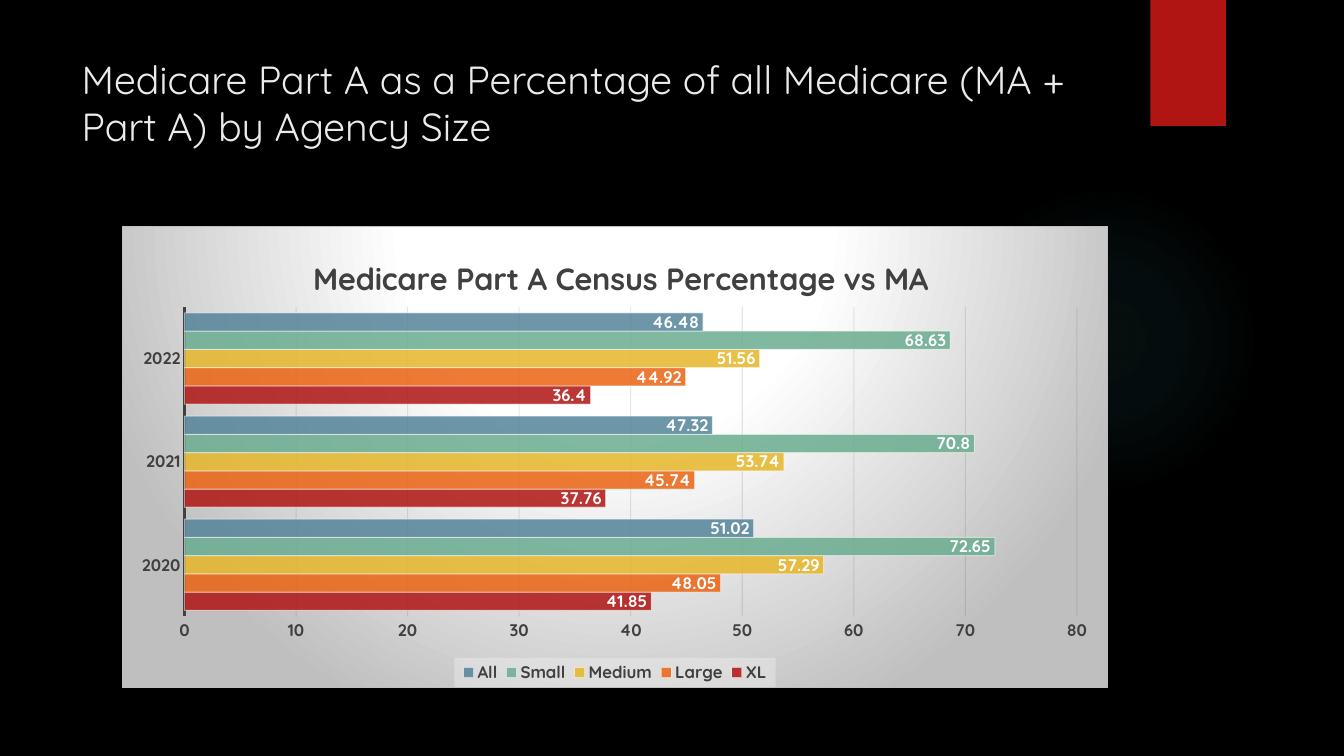
from dataclasses import dataclass

from lxml import etree
from pptx import Presentation
from pptx.chart.data import CategoryChartData
from pptx.dml.color import RGBColor
from pptx.enum.chart import XL_CHART_TYPE, XL_LABEL_POSITION, XL_LEGEND_POSITION, XL_TICK_MARK
from pptx.enum.shapes import MSO_SHAPE
from pptx.enum.text import MSO_ANCHOR, MSO_AUTO_SIZE, PP_ALIGN
from pptx.oxml import parse_xml
from pptx.oxml.ns import nsdecls, qn
from pptx.util import Inches, Pt

BAR_CLUSTERED = XL_CHART_TYPE.BAR_CLUSTERED
INSIDE_END = XL_LABEL_POSITION.INSIDE_END
LEGEND_BOTTOM = XL_LEGEND_POSITION.BOTTOM
NO_TICK = XL_TICK_MARK.NONE
ELLIPSE, RECTANGLE = MSO_SHAPE.OVAL, MSO_SHAPE.RECTANGLE


@dataclass(frozen=True)
class Theme:
    font: str = "Quicksand"
    background: RGBColor = RGBColor.from_string("000000")
    title: RGBColor = RGBColor.from_string("EBEBEB")
    accent: RGBColor = RGBColor.from_string("B01513")
    dark: RGBColor = RGBColor.from_string("404040")
    grid: RGBColor = RGBColor.from_string("0D0D0D")
    white: RGBColor = RGBColor.from_string("FFFFFF")
    title_size: Pt = Pt(28)
    chart_title_size: Pt = Pt(22)
    label_size: Pt = Pt(12)
    chart_size: Pt = Pt(10)
    thin: Pt = Pt(0.75)


theme = Theme()
YEARS = ["2020", "2021", "2022"]
AGENCIES = [
    ("XL", "B01513", (41.85, 37.76, 36.4)),
    ("Large", "EA6312", (48.05, 45.74, 44.92)),
    ("Medium", "E6B729", (57.29, 53.74, 51.56)),
    ("Small", "6AAC90", (72.65, 70.8, 68.63)),
    ("All", "54849A", (51.02, 47.32, 46.48)),
]


def radial_gradient(stops, center):
    """Return a circular fill; stops are (position, colour, opacity) in percent."""
    stop_xml = "".join(
        f'<a:gs pos="{position * 1000}"><a:srgbClr val="{color}">'
        f'<a:alpha val="{opacity * 1000}"/></a:srgbClr></a:gs>'
        for position, color, opacity in stops)
    edges = " ".join(f'{side}="{share * 1000}"' for side, share in zip("ltrb", center))
    return parse_xml(
        f'<a:gradFill {nsdecls("a")} rotWithShape="1"><a:gsLst>{stop_xml}</a:gsLst>'
        f'<a:path path="circle"><a:fillToRect {edges}/></a:path></a:gradFill>')


def set_opacity(properties, *percents):
    """Apply one opacity to each colour, in document order."""
    for color, percent in zip(properties.iter(qn("a:srgbClr")), percents):
        etree.SubElement(color, qn("a:alpha")).set("val", str(percent * 1000))


deck = Presentation()
deck.slide_width, deck.slide_height = Inches(13.33), Inches(7.5)
page = deck.slides.add_slide(deck.slide_layouts.get_by_name("Title Only"))
page.background.fill.solid()
page.background.fill.fore_color.rgb = theme.background

# Backdrop
glow = page.shapes.add_shape(ELLIPSE, Inches(9.41), Inches(1.83), Inches(3.08), Inches(3.08))
glow.shadow.inherit = False
glow.line.fill.background()
glow_fill = radial_gradient([(0, "50B9C1", 7), (36, "50B9C1", 6), (69, "50B9C1", 0)],
                            (50, 50, 50, 50))
glow._element.spPr.find(qn("a:prstGeom")).addnext(glow_fill)

ribbon = page.shapes.add_shape(RECTANGLE, Inches(11.41), 0, Inches(0.75), Inches(1.25))
ribbon.shadow.inherit = False
ribbon.line.fill.background()
ribbon.fill.solid()
ribbon.fill.fore_color.rgb = theme.accent

# Title
title = page.shapes.title
title.left, title.top, title.width, title.height = map(Inches, (0.71, 0.5, 10.29, 1.53))
title.text_frame.text = "Medicare Part A as a Percentage of all Medicare (MA + Part A) by Agency Size"
title.text_frame.auto_size = MSO_AUTO_SIZE.NONE
title.text_frame.vertical_anchor = MSO_ANCHOR.TOP
para = title.text_frame.paragraphs[0]
para.alignment = PP_ALIGN.LEFT
para.font.name, para.font.size = theme.font, theme.title_size
para.font.color.rgb = theme.title

# Chart
data = CategoryChartData()
data.categories = YEARS
for name, _, values in AGENCIES:
    data.add_series(name, values)
chart = page.shapes.add_chart(BAR_CLUSTERED, Inches(1.21), Inches(2.24),
                              Inches(9.78), Inches(4.59), data).chart
chart.font.name, chart.font.size = theme.font, theme.chart_size
chart.font.color.rgb = theme.white

chart.has_title = True
chart.chart_title.include_in_layout = False
heading = chart.chart_title.text_frame
heading.text = "Medicare Part A Census Percentage vs MA"
heading_font = heading.paragraphs[0].font
heading_font.size = theme.chart_title_size

chart.has_legend = True
chart.legend.position = LEGEND_BOTTOM
chart.legend.include_in_layout = False

years, shares = chart.category_axis, chart.value_axis
for axis in (years, shares):
    axis.major_tick_mark = axis.minor_tick_mark = NO_TICK
    axis.tick_labels.font.size = theme.label_size
chart.legend.font.size = theme.label_size
for font in (heading_font, chart.legend.font, years.tick_labels.font, shares.tick_labels.font):
    font.name, font.bold = theme.font, True
    font.color.rgb = theme.dark

years.format.line.color.rgb = theme.dark
years.format.line.width = Pt(1.5)
shares.minimum_scale, shares.maximum_scale, shares.major_unit = 0, 80, 10
shares.format.line.fill.background()
grid_line = shares.major_gridlines.format.line
grid_line.color.rgb, grid_line.width = theme.grid, theme.thin
set_opacity(shares._element.find(qn("c:majorGridlines")), 10)

plot = chart.plots[0]
plot.gap_width, plot.overlap, plot.vary_by_categories = 65, 0, False
for bars, (_, color, _) in zip(plot.series, AGENCIES):
    bars.format.fill.solid()
    bars.format.fill.fore_color.rgb = RGBColor.from_string(color)
    bars.format.line.color.rgb = theme.white
    bars.format.line.width = theme.thin
    set_opacity(bars._element.find(qn("c:spPr")), 85, 50)
    labels = bars.data_labels
    labels.show_value, labels.position = True, INSIDE_END
    labels.font.name, labels.font.size, labels.font.bold = theme.font, theme.label_size, True
    labels.font.color.rgb = theme.white

# Chart background and legend panel
chart_part = chart._chartSpace.find(qn("c:chart"))
frame = parse_xml(
    f'<c:spPr {nsdecls("c", "a")}><a:ln w="{theme.thin}"><a:solidFill>'
    '<a:srgbClr val="BFBFBF"/></a:solidFill></a:ln></c:spPr>')
frame.insert(0, radial_gradient([(0, "FFFFFF", 100), (39, "FFFFFF", 100), (100, "BFBFBF", 100)],
                                (50, -80, 50, 180)))
chart_part.addnext(frame)
legend_panel = parse_xml(
    f'<c:spPr {nsdecls("c", "a")}><a:solidFill><a:srgbClr val="F2F2F2"/></a:solidFill></c:spPr>')
set_opacity(legend_panel, 39)
chart.legend._element.find(qn("c:overlay")).addnext(legend_panel)

# Places inside the chart, as shares of its width and height
places = [
    (chart_part.find(qn("c:plotArea")), 0, {"x": 0.063, "y": 0.175, "w": 0.906, "h": 0.67}),
    (chart_part.find(qn("c:title")), 1, {"x": 0.188, "y": 0.054}),
    (chart.legend._element, 1, {"x": 0.337, "y": 0.935, "w": 0.326, "h": 0.063}),
]
for part, index, place in places:
    for old_layout in part.findall(qn("c:layout")):
        part.remove(old_layout)
    target = '<c:layoutTarget val="inner"/>' if index == 0 else ""
    modes = "".join(f'<c:{side}Mode val="edge"/>' for side in "xy")
    sizes = "".join(f'<c:{side} val="{share}"/>' for side, share in place.items())
    part.insert(index, parse_xml(
        f'<c:layout {nsdecls("c")}><c:manualLayout>{target}{modes}{sizes}'
        '</c:manualLayout></c:layout>'))

deck.save("out.pptx")
